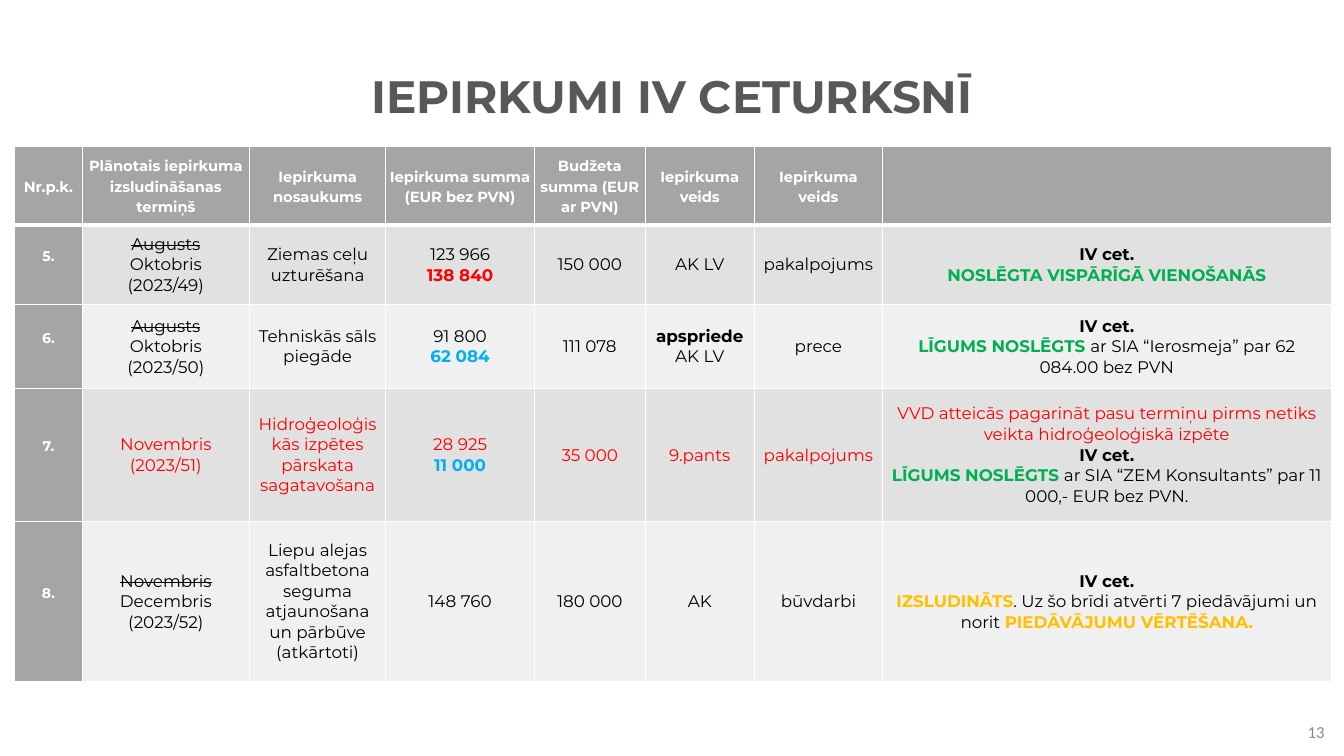
"""Build the slide listing the fourth-quarter procurements."""
import pptx
import pptx.dml.color
import pptx.enum.text
import pptx.oxml
import pptx.oxml.ns
import pptx.util

Cm, Pt = pptx.util.Cm, pptx.util.Pt
ANCHOR, ALIGN = pptx.enum.text.MSO_ANCHOR, pptx.enum.text.PP_ALIGN

COLORS = {
    "title": "58585B", "white": "FFFFFF", "black": "000000", "head": "A5A5A5",
    "odd": "E1E1E1", "even": "F0F0F0", "red": "FF0000", "green": "00B050",
    "blue": "00B0F0", "amber": "FFC000", "page": "8C8C8C",
}
TITLE = "IEPIRKUMI IV CETURKSNĪ"
PAGE = "13"
HEADINGS = [
    "Nr.p.k.", "Plānotais iepirkuma izsludināšanas termiņš", "Iepirkuma nosaukums",
    "Iepirkuma summa (EUR bez PVN)", "Budžeta summa (EUR ar PVN)",
    "Iepirkuma veids", "Iepirkuma veids", "",
]
STYLES = {
    "plain": ("black", False), "bold": ("black", True), "strike": ("black", False),
    "red": ("red", False), "red bold": ("red", True), "blue": ("blue", True),
    "green": ("green", True), "amber": ("amber", True), "head": ("white", True),
}
QUARTER = [("IV cet.", "bold")]
SIGNED = ("LĪGUMS NOSLĒGTS ", "green")
PURCHASES = [
    ("5.",
     [[("Augusts", "strike")], "Oktobris", "(2023/49)"],
     ["Ziemas ceļu uzturēšana"],
     ["123 966", [("138 840", "red bold")]],
     ["150 000"], ["AK LV"], ["pakalpojums"],
     [QUARTER, [("NOSLĒGTA VISPĀRĪGĀ VIENOŠANĀS", "green")]]),
    ("6.",
     [[("Augusts", "strike")], "Oktobris", "(2023/50)"],
     ["Tehniskās sāls piegāde"],
     ["91 800", [("62 084", "blue")]],
     ["111 078"], [[("apspriede", "bold")], "AK LV"], ["prece"],
     [QUARTER, [SIGNED, ("ar SIA “Ierosmeja” par 62 084.00 bez PVN", "plain")]]),
    ("7.",
     [[("Novembris", "red")], [("(2023/51)", "red")]],
     [[("Hidroģeoloģiskās izpētes pārskata sagatavošana", "red")]],
     [[("28 925", "red")], [("11 000", "blue")]],
     [[("35 000", "red")]], [[("9.pants", "red")]], [[("pakalpojums", "red")]],
     [[("VVD atteicās pagarināt pasu termiņu pirms netiks veikta "
        "hidroģeoloģiskā izpēte", "red")],
      QUARTER,
      [SIGNED, ("ar SIA “ZEM Konsultants” par 11 000,- EUR bez PVN.", "plain")]]),
    ("8.",
     [[("Novembris", "strike")], "Decembris", "(2023/52)"],
     ["Liepu alejas asfaltbetona seguma atjaunošana un pārbūve (atkārtoti)"],
     ["148 760"], ["180 000"], ["AK"], ["būvdarbi"],
     [QUARTER,
      [("IZSLUDINĀTS", "amber"),
       (". Uz šo brīdi atvērti 7 piedāvājumi un norit ", "plain"),
       ("PIEDĀVĀJUMU VĒRTĒŠANA.", "amber")]]),
]
COLUMN_WIDTHS = [1.7, 4.22, 3.43, 3.75, 2.79, 2.75, 3.23, 11.31]
ROW_HEIGHTS = [1.98, 2.01, 2.11, 3.35, 4.04]
HEADING_CELL = {"margin_left": Cm(0.08), "margin_right": Cm(0.08),
                "margin_top": 0, "margin_bottom": 0}
NUMBER_CELL = {"margin_left": Cm(0.18), "margin_right": Cm(0.18),
               "margin_top": Cm(0.13), "margin_bottom": Cm(0.56)}
BODY_CELL = {"margin_left": Cm(0.18), "margin_right": Cm(0.18),
             "margin_top": 0, "margin_bottom": 0}
HEADING_SPACING = {"line_spacing": 1.15, "space_after": Pt(8)}


def apply(target, values):
    for name, value in values.items():
        setattr(target, name, value)


def rgb(color):
    return pptx.dml.color.RGBColor.from_string(COLORS[color])


def write(paragraph, text, size, color, bold=False, font="Montserrat"):
    run = paragraph.add_run()
    run.text = text
    apply(run.font, {"size": Pt(size), "bold": bold, "name": font})
    run.font.color.rgb = rgb(color)
    return run


def fill_cell(cell, lines, size, fill, margins, spacing):
    cell.fill.solid()
    cell.fill.fore_color.rgb = rgb(fill)
    apply(cell, {"vertical_anchor": ANCHOR.MIDDLE, **margins})
    for index, line in enumerate(lines):
        frame = cell.text_frame
        paragraph = frame.add_paragraph() if index else frame.paragraphs[0]
        apply(paragraph, {"alignment": ALIGN.CENTER, **spacing})
        for text, style in [(line, "plain")] if isinstance(line, str) else line:
            run = write(paragraph, text, size, *STYLES[style])
            if style == "strike":
                run._r.get_or_add_rPr().set("strike", "sngStrike")


def outline_cell(cell, top, bottom):
    properties = cell._tc.get_or_add_tcPr()
    sides = {"L": 1, "R": 1, "T": top, "B": bottom}
    for index, (side, width) in enumerate(sides.items()):
        properties.insert(index, pptx.oxml.parse_xml(
            f'<a:ln{side} {pptx.oxml.ns.nsdecls("a")} w="{Pt(width)}"><a:solidFill>'
            f'<a:srgbClr val="{COLORS["white"]}"/></a:solidFill></a:ln{side}>'))


def main():
    deck = pptx.Presentation()
    apply(deck, {"slide_width": Cm(33.87), "slide_height": Cm(19.05)})
    slide = deck.slides.add_slide(deck.slide_layouts[5])

    title = slide.shapes.title
    apply(title, {"left": Cm(2.33), "top": Cm(1.85), "width": Cm(29.21), "height": Cm(1.27)})
    apply(title.text_frame, {"vertical_anchor": ANCHOR.MIDDLE, "word_wrap": True})
    heading = title.text_frame.paragraphs[0]
    apply(heading, {"alignment": ALIGN.CENTER, "line_spacing": 0.9})
    write(heading, TITLE, 32.4, "title", True)

    plan = slide.shapes.add_table(
        len(ROW_HEIGHTS), len(COLUMN_WIDTHS), Cm(0.37), Cm(3.69),
        Cm(sum(COLUMN_WIDTHS)), Cm(sum(ROW_HEIGHTS))).table
    for column, width in zip(plan.columns, COLUMN_WIDTHS):
        column.width = Cm(width)
    for row, height in zip(plan.rows, ROW_HEIGHTS):
        row.height = Cm(height)

    for column, text in enumerate(HEADINGS):
        lines = [[(text, "head")]] if text else []
        fill_cell(plan.cell(0, column), lines, 10.5, "head", HEADING_CELL, HEADING_SPACING)
    for row, (number, *details) in enumerate(PURCHASES, 1):
        fill_cell(plan.cell(row, 0), [[(number, "head")]], 10, "head", NUMBER_CELL, {})
        for column, lines in enumerate(details, 1):
            band = "odd" if row % 2 else "even"
            fill_cell(plan.cell(row, column), lines, 12, band, BODY_CELL, {})
    for row in range(len(ROW_HEIGHTS)):
        for cell in plan.rows[row].cells:
            outline_cell(cell, 3 if row == 1 else 1, 3 if row == 0 else 1)

    page = slide.shapes.add_textbox(Cm(26.01), Cm(17.93), Cm(7.62), Cm(1.02)).text_frame
    apply(page, {"word_wrap": True, "vertical_anchor": ANCHOR.MIDDLE})
    page.paragraphs[0].alignment = ALIGN.RIGHT
    write(page.paragraphs[0], PAGE, 12, "page", font="Calibri")

    deck.save("out.pptx")


if __name__ == "__main__":
    main()
